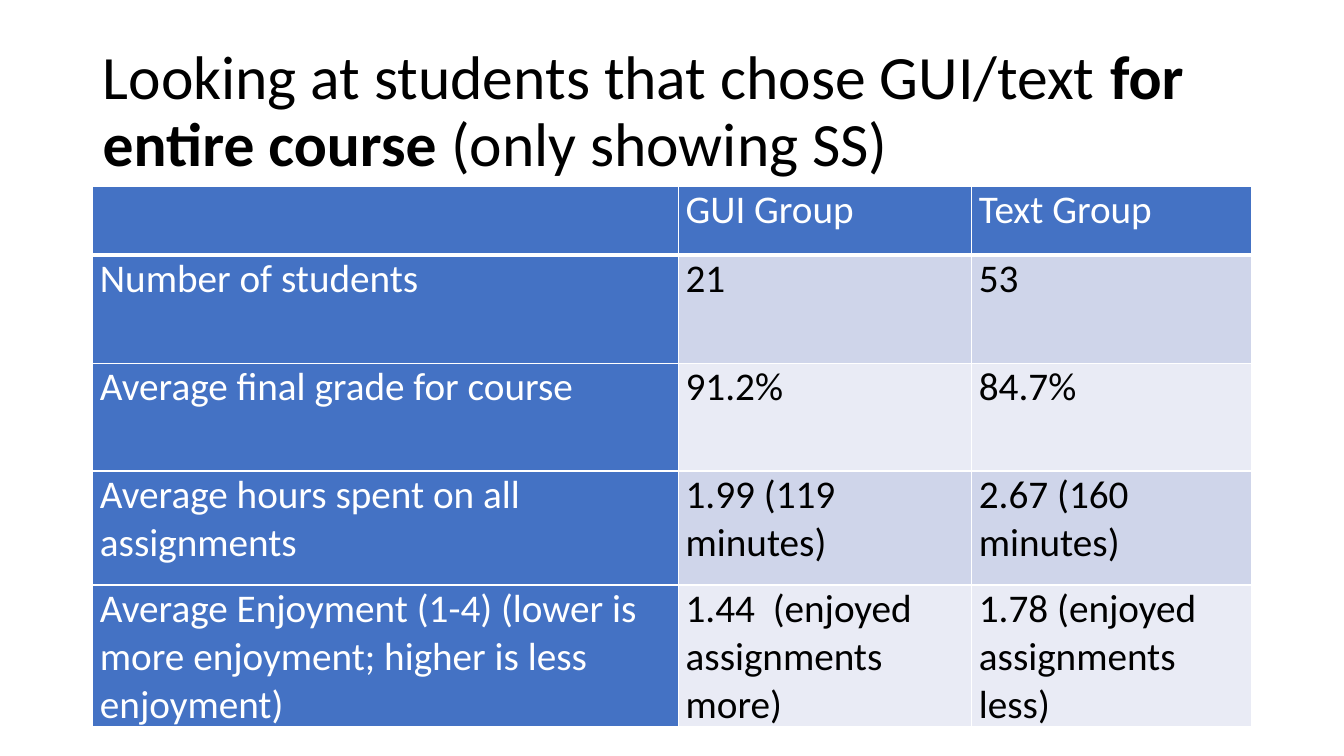
from lxml import etree
from pptx import Presentation
from pptx.dml.color import RGBColor
from pptx.enum.text import MSO_ANCHOR
from pptx.oxml.ns import qn
from pptx.util import Cm, Pt

MIDDLE = MSO_ANCHOR.MIDDLE

COLORS = {
    "black": "000000",
    "white": "FFFFFF",
    "header": "4472C4",
    "band_dark": "CFD5EA",
    "band_light": "E9EBF5",
}


class SlideBuilder:
    font = "Calibri"
    title_size = 44
    table_size = 28

    def __init__(self, slide):
        self.slide = slide

    def color(self, name):
        return RGBColor.from_string(COLORS[name])

    def style(self, paragraph, size, color):
        paragraph.font.name = self.font
        paragraph.font.size = Pt(size)
        paragraph.font.color.rgb = self.color(color)

    def title(self, left, top, width, height, parts):
        """Add a title from (text, bold) parts."""
        frame = self.slide.shapes.add_textbox(
            Cm(left), Cm(top), Cm(width), Cm(height)).text_frame
        frame.word_wrap = True
        frame.vertical_anchor = MIDDLE
        heading = frame.paragraphs[0]
        heading.line_spacing = 0.9
        self.style(heading, self.title_size, "black")
        for text, bold in parts:
            run = heading.add_run()
            run.text = text
            run.font.bold = bold

    def borders(self, cell, widths):
        """Draw white cell edges; widths are in order left, right, top, bottom."""
        properties = cell._tc.get_or_add_tcPr()
        for index, (side, width) in enumerate(zip("LRTB", widths)):
            edge = etree.Element(qn(f"a:ln{side}"), w=str(Pt(width)))
            fill = etree.SubElement(edge, qn("a:solidFill"))
            etree.SubElement(fill, qn("a:srgbClr"), val=COLORS["white"])
            properties.insert(index, edge)

    def cell(self, cell, text, fill, color, widths):
        cell.fill.solid()
        cell.fill.fore_color.rgb = self.color(fill)
        cell.margin_left = cell.margin_right = Cm(0.18)
        cell.margin_top = cell.margin_bottom = 0
        cell.text = text
        paragraph = cell.text_frame.paragraphs[0]
        self.style(paragraph, self.table_size, color)
        paragraph.font.bold = False
        self.borders(cell, widths)

    def table(self, left, top, column_widths, row_heights, rows):
        table = self.slide.shapes.add_table(
            len(rows), len(column_widths), Cm(left), Cm(top),
            Cm(sum(column_widths)), Cm(sum(row_heights))).table
        table.first_col = True
        for column, width in zip(table.columns, column_widths):
            column.width = Cm(width)
        for row, height in zip(table.rows, row_heights):
            row.height = Cm(height)
        for r, row in enumerate(rows):
            # The thick rule lies between the header and the first data row
            widths = (1, 1, 3 if r == 1 else 1, 3 if r == 0 else 1)
            band = "band_dark" if r % 2 else "band_light"
            for c, text in enumerate(row):
                is_header = r == 0 or c == 0
                self.cell(table.cell(r, c), text,
                          "header" if is_header else band,
                          "white" if is_header else "black", widths)


RESULTS = [
    ("", "GUI Group", "Text Group"),
    ("Number of students", "21", "53"),
    ("Average final grade for course", "91.2%", "84.7%"),
    ("Average hours spent on all assignments",
     "1.99 (119 minutes)", "2.67 (160 minutes)"),
    ("Average Enjoyment (1-4) (lower is more enjoyment; "
     "higher is less enjoyment)",
     "1.44  (enjoyed assignments more)", "1.78 (enjoyed assignments less)"),
]


def main():
    presentation = Presentation()
    presentation.slide_width = Cm(33.87)
    presentation.slide_height = Cm(19.05)
    blank = presentation.slide_layouts[6]
    builder = SlideBuilder(presentation.slides.add_slide(blank))

    # Title
    builder.title(2.34, 1.01, 29.21, 3.68, [
        ("Looking at students that chose GUI/text ", False),
        ("for entire course", True),
        (" (only showing SS)", False),
    ])

    # Comparison of the two groups
    builder.table(2.34, 4.7, [14.76, 7.39, 7.06],
                  [1.73, 2.72, 2.72, 2.87, 3.45], RESULTS)

    presentation.save("out.pptx")


if __name__ == "__main__":
    main()
